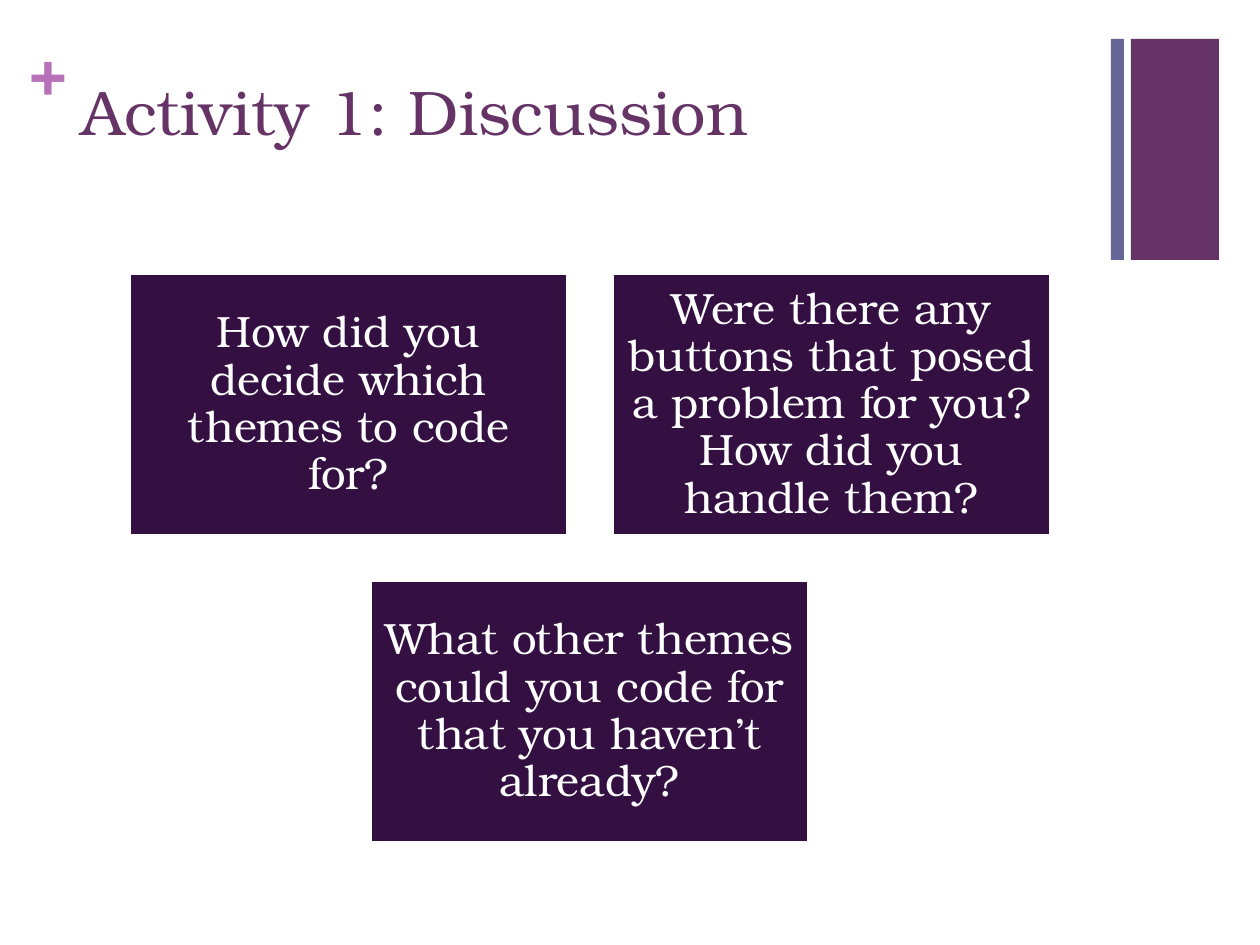
"""Build the discussion slide with three question cards."""
from dataclasses import dataclass

from pptx import Presentation
from pptx.dml.color import RGBColor
from pptx.enum.shapes import MSO_SHAPE
from pptx.enum.text import MSO_ANCHOR, PP_ALIGN
from pptx.util import Emu, Pt

RECT = MSO_SHAPE.RECTANGLE
TOP, MID = MSO_ANCHOR.TOP, MSO_ANCHOR.MIDDLE
LEFT, MIDST = PP_ALIGN.LEFT, PP_ALIGN.CENTER
SCALE = 914400 / 126
FONT = "TeX Gyre Bonum"
HUES = {
    "plum": "663366",
    "slate": "666699",
    "pink": "B870B8",
    "card": "330F42",
    "white": "FFFFFF",
}
CARD_W, CARD_H, GAP = 439, 263, 44
CARD_X, CARD_Y = 129, 273
STEP_X, STEP_Y = CARD_W + GAP, CARD_H + GAP


@dataclass
class Box:
    x: int
    y: int
    w: int
    h: int


@dataclass
class Label:
    box: Box
    text: str
    hue: str
    pad: tuple[int, int]
    bold: bool = False


@dataclass
class Bar:
    box: Box
    hue: str


@dataclass
class Card:
    col: float
    row: int
    text: str


BARS = [
    Bar(Box(1131, 39, 88, 221), "plum"),
    Bar(Box(1111, 39, 13, 221), "slate"),
]
LABELS = [
    Label(Box(30, 32, 35, 77), "+", "pink", (0, 0), True),
    Label(Box(69, 67, 1041, 154), "Activity 1: Discussion", "plum", (13, 6)),
]
CARDS = [
    Card(0, 0, "How did you decide which themes to code for?"),
    Card(1, 0, "Were there any buttons that posed a problem for you? "
               "How did you handle them?"),
    Card(0.5, 1, "What other themes could you code for that you haven’t already?"),
]


def px(num: float) -> Emu:
    """Turn pixels into EMU."""
    return Emu(round(num * SCALE))


def place(box: Box) -> tuple[Emu, Emu, Emu, Emu]:
    """Give the left, top, width and height of a box in EMU."""
    return px(box.x), px(box.y), px(box.w), px(box.h)


def tint(hue: str) -> RGBColor:
    """Look up a colour by name."""
    return RGBColor.from_string(HUES[hue])


def write(shape, text: str, size: int, hue: str, pad: tuple[int, int],
          anchor=TOP, align=LEFT, bold: bool = False):
    """Set the text of a shape and return its paragraph."""
    frame = shape.text_frame
    frame.text = text
    frame.word_wrap = True
    frame.vertical_anchor = anchor
    frame.margin_left = frame.margin_right = px(pad[0])
    frame.margin_top = frame.margin_bottom = px(pad[1])
    para = frame.paragraphs[0]
    para.alignment = align
    for run in para.runs:
        run.font.name = FONT
        run.font.size = Pt(size)
        run.font.bold = bold
        run.font.color.rgb = tint(hue)
    return para


def block(slide, box: Box, hue: str):
    """Draw a plain filled rectangle."""
    shape = slide.shapes.add_shape(RECT, *place(box))
    shape.shadow.inherit = False
    shape.fill.solid()
    shape.fill.fore_color.rgb = tint(hue)
    shape.line.fill.background()
    return shape


def draw_label(slide, label: Label) -> None:
    """Draw a line of heading text."""
    shape = slide.shapes.add_textbox(*place(label.box))
    write(shape, label.text, 36, label.hue, label.pad, bold=label.bold)


def draw_card(slide, card: Card) -> None:
    """Draw a question card at its grid cell."""
    left = CARD_X + int(card.col * STEP_X)
    top = CARD_Y + card.row * STEP_Y
    shape = block(slide, Box(left, top, CARD_W, CARD_H), "card")
    shape.line.color.rgb = tint("white")
    shape.line.width = Pt(2)
    para = write(shape, card.text, 25, "white", (13, 13), MID, MIDST)
    para.line_spacing = 0.9


def main() -> None:
    """Build and save the slide."""
    deck = Presentation()
    deck.slide_width, deck.slide_height = px(1260), px(945)
    slide = deck.slides.add_slide(deck.slide_layouts[6])
    for bar in BARS:
        block(slide, bar.box, bar.hue)
    for label in LABELS:
        draw_label(slide, label)
    for card in CARDS:
        draw_card(slide, card)
    deck.save("out.pptx")


if __name__ == "__main__":
    main()
